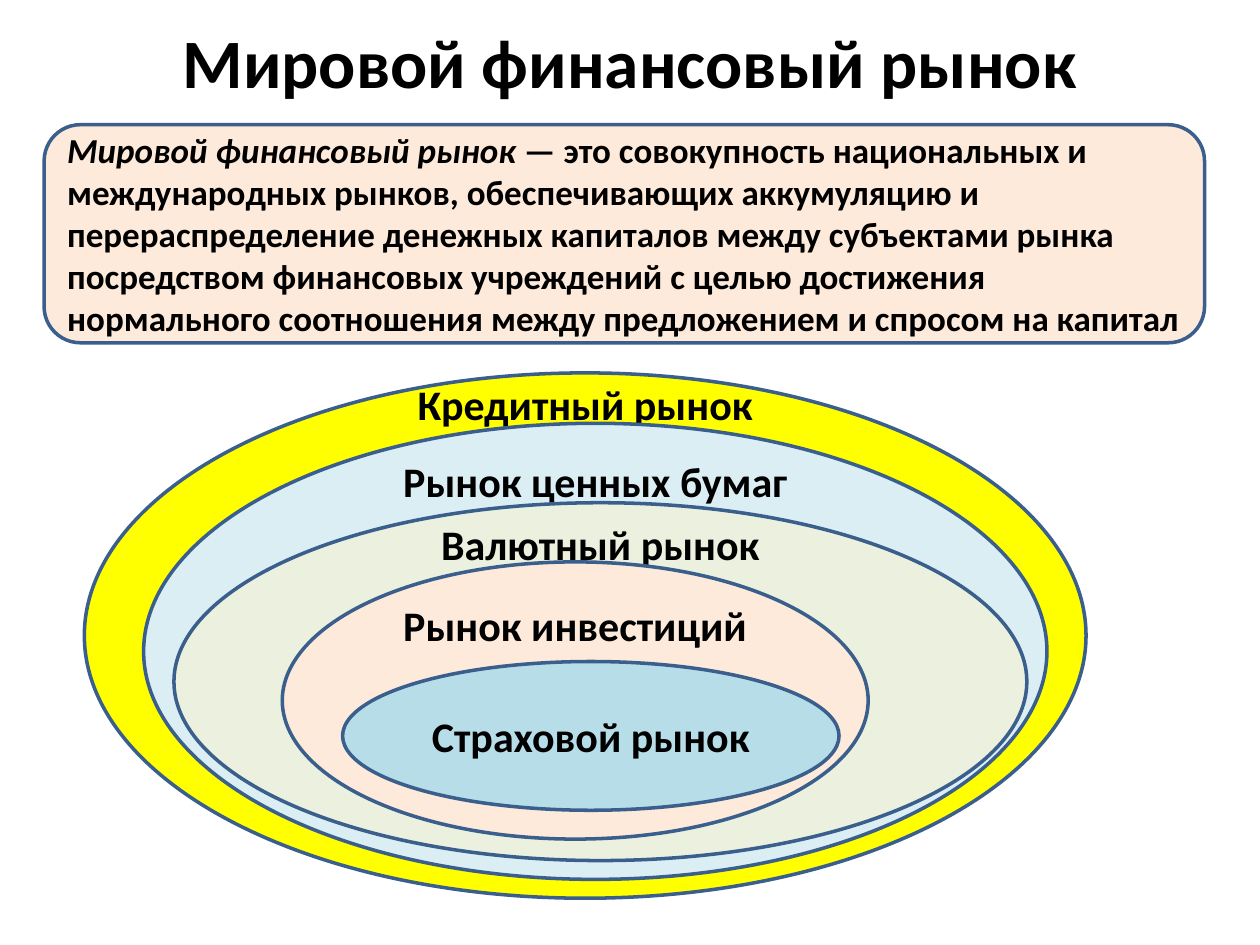
from dataclasses import dataclass

import pptx
import pptx.dml.color
import pptx.enum.shapes
import pptx.enum.text
import pptx.util

Pt = pptx.util.Pt
Shapes = pptx.enum.shapes.MSO_SHAPE
Anchor = pptx.enum.text.MSO_ANCHOR
Align = pptx.enum.text.PP_ALIGN


@dataclass(frozen=True)
class Theme:
    font: str = "Calibri"
    text: str = "000000"
    outline: str = "3A5F8C"
    peach: str = "FDEADA"
    yellow: str = "FFFF00"
    pale_blue: str = "DBEEF4"
    pale_green: str = "EBF1DE"
    blue: str = "B7DEE8"
    title_size: float = 39.6
    body_size: float = 20
    label_size: float = 24
    outline_width: float = 2


THEME = Theme()

TITLE = "Мировой финансовый рынок"
DEFINITION = (
    " — это совокупность национальных и международных рынков, "
    "обеспечивающих аккумуляцию и перераспределение денежных капиталов "
    "между субъектами рынка посредством финансовых учреждений с целью "
    "достижения нормального соотношения между предложением и спросом на капитал"
)

MARKETS = [
    ("Кредитный рынок", THEME.yellow, (48.2, 213.1, 572.4, 300.2), -41),
    ("Рынок ценных бумаг", THEME.pale_blue, (82.1, 241.9, 516.2, 260.6), -19.5),
    ("Валютный рынок", THEME.pale_green, (99.4, 287.3, 487.4, 204.5), -21),
    ("Рынок инвестиций", THEME.peach, (161.3, 321.1, 334.8, 158.4), -1.5),
    ("Страховой рынок", THEME.blue, (195.8, 378, 283.7, 85), 15.5),
]


def color(value):
    return pptx.dml.color.RGBColor.from_string(value)


def apply_format(target, values):
    for name, value in values.items():
        setattr(target, name, value)


def write_text(box, spans, size, align, frame_format):
    apply_format(box.text_frame, {"word_wrap": True, **frame_format})
    para = box.text_frame.paragraphs[0]
    para.alignment = align
    for text, italic in spans:
        span = para.add_run()
        span.text = text
        apply_format(span.font, {
            "name": THEME.font, "size": Pt(size), "bold": True, "italic": italic,
        })
        span.font.color.rgb = color(THEME.text)


def add_title(page, text, frame):
    box = page.shapes.add_textbox(*map(Pt, frame))
    write_text(box, [(text, False)], THEME.title_size, Align.CENTER,
               {"vertical_anchor": Anchor.MIDDLE})


def add_outlined_shape(page, kind, frame, fill):
    shape = page.shapes.add_shape(kind, *map(Pt, frame))
    shape.shadow.inherit = False
    shape.fill.solid()
    shape.fill.fore_color.rgb = color(fill)
    shape.line.color.rgb = color(THEME.outline)
    shape.line.width = Pt(THEME.outline_width)
    return shape


def add_definition(page, term, definition, frame):
    box = add_outlined_shape(page, Shapes.ROUNDED_RECTANGLE, frame, THEME.peach)
    write_text(box, [(term, True), (definition, False)], THEME.body_size, Align.LEFT,
               {"vertical_anchor": Anchor.MIDDLE, "margin_right": Pt(6)})


def add_market(page, label, fill, frame, label_offset):
    oval = add_outlined_shape(page, Shapes.OVAL, frame, fill)
    write_text(oval, [(label, False)], THEME.label_size, Align.CENTER,
               {"vertical_anchor": Anchor.TOP, "margin_top": Pt(label_offset)})


def main():
    deck = pptx.Presentation()
    apply_format(deck, {"slide_width": Pt(720), "slide_height": Pt(540)})
    page = deck.slides.add_slide(deck.slide_layouts[6])
    add_title(page, TITLE, (36, 15.1, 648, 39.6))
    add_definition(page, TITLE, DEFINITION, (25.2, 71.3, 663.1, 124.6))
    for market in MARKETS:
        add_market(page, *market)
    deck.save("out.pptx")


if __name__ == "__main__":
    main()
